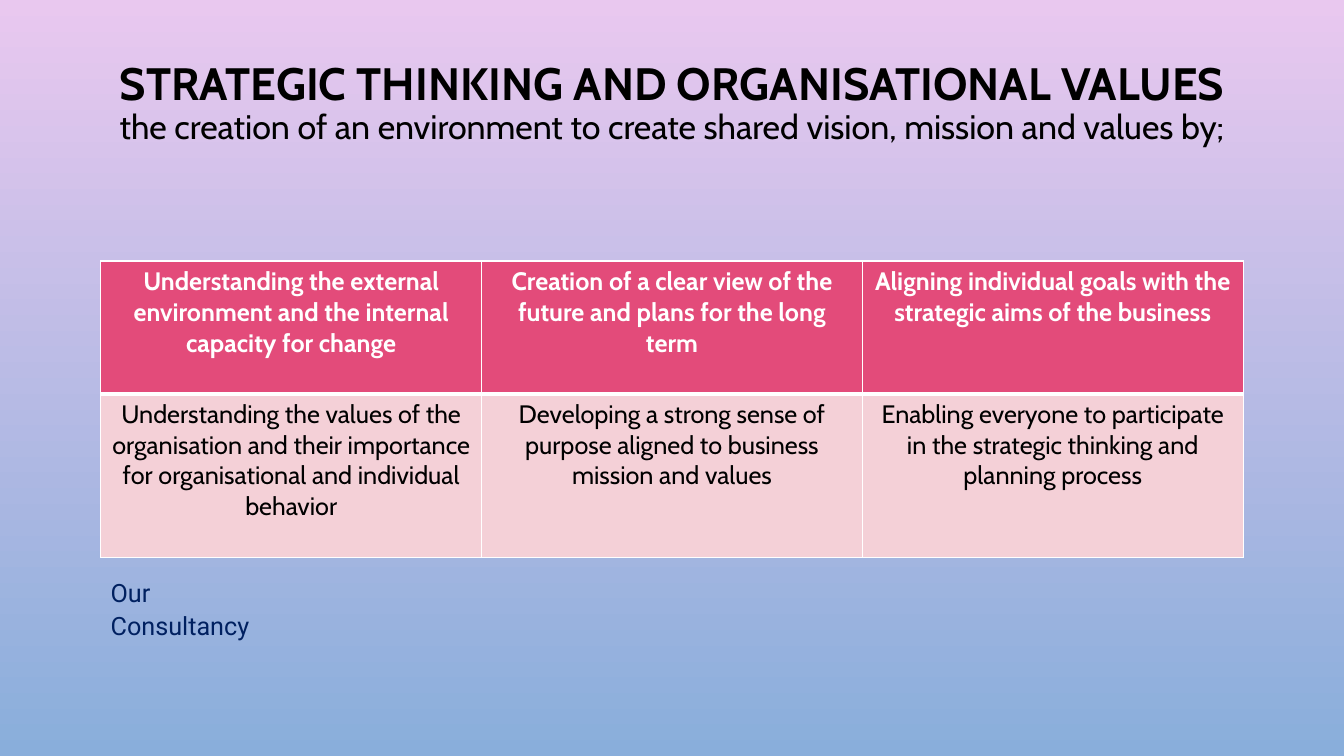
from lxml import etree
from pptx import Presentation
from pptx.dml.color import RGBColor
from pptx.enum.text import MSO_ANCHOR, MSO_AUTO_SIZE, PP_ALIGN
from pptx.oxml.ns import qn
from pptx.util import Pt

TOP = MSO_ANCHOR.TOP
NO_FIT = MSO_AUTO_SIZE.NONE
LEFT, CENTER = PP_ALIGN.LEFT, PP_ALIGN.CENTER
TITLE_ONLY = 5

COLORS = {
    "sky_top": "E9C8EF",
    "sky_bottom": "89AEDB",
    "header": "E34B7A",
    "body": "F4D0D7",
    "white": "FFFFFF",
    "black": "000000",
    "navy": "002060",
}

HEADINGS = [
    "Understanding the external environment and the internal capacity for change",
    "Creation of a clear view of the future and plans for the long term",
    "Aligning individual goals with the strategic aims of the business",
]
DETAILS = [
    "Understanding the values of the organisation and their importance "
    "for organisational and individual behavior",
    "Developing a strong sense of purpose aligned to business mission and values",
    "Enabling everyone to participate in the strategic thinking and planning process",
]


def rgb(name):
    return RGBColor.from_string(COLORS[name])


def add_text(p, text, size=18, font="Cabin", color="black", bold=False, align=CENTER):
    p.alignment = align
    r = p.add_run()
    r.text = text
    r.font.size = Pt(size)
    r.font.name = font
    r.font.bold = bold
    r.font.color.rgb = rgb(color)


def set_borders(cell, **widths):
    tcPr = cell._tc.get_or_add_tcPr()
    for side in ("L", "R", "T", "B"):
        ln = etree.SubElement(tcPr, qn(f"a:ln{side}"), w=str(Pt(widths.get(side, 1))))
        fill = etree.SubElement(ln, qn("a:solidFill"))
        etree.SubElement(fill, qn("a:srgbClr"), val=COLORS["white"])


def add_background(s):
    fill = s.background.fill
    fill.gradient()
    fill.gradient_angle = 270
    for stop, position, name in zip(fill.gradient_stops, (0, 1), ("sky_top", "sky_bottom")):
        stop.position = position
        stop.color.rgb = rgb(name)


def add_title(s, x, y, w, h):
    sp = s.shapes.title
    sp.left, sp.top, sp.width, sp.height = Pt(x), Pt(y), Pt(w), Pt(h)
    tf = sp.text_frame
    tf.word_wrap = True
    tf.auto_size = NO_FIT
    tf.vertical_anchor = TOP
    tf.margin_top = Pt(0)
    p = tf.paragraphs[0]
    p.line_spacing = 0.9
    add_text(p, "STRATEGIC THINKING AND ORGANISATIONAL VALUES", size=32.4, bold=True)
    p.add_line_break()
    add_text(p, "the creation of an environment to create shared vision, "
                "mission and values by;", size=24.3)


def add_values_table(s, x, y, w, row_heights):
    table = s.shapes.add_table(2, 3, Pt(x), Pt(y), Pt(w), Pt(sum(row_heights))).table
    table.horz_banding = False
    for col in table.columns:
        col.width = Pt(w / 3)
    rows = [
        (HEADINGS, "header", "white", True, {"B": 3}),
        (DETAILS, "body", "black", False, {"T": 3}),
    ]
    for i, (texts, fill, color, bold, borders) in enumerate(rows):
        table.rows[i].height = Pt(row_heights[i])
        for j, text in enumerate(texts):
            cell = table.cell(i, j)
            set_borders(cell, **borders)
            cell.fill.solid()
            cell.fill.fore_color.rgb = rgb(fill)
            add_text(cell.text_frame.paragraphs[0], text, color=color, bold=bold)


def add_footer(s, x, y, w, h):
    tf = s.shapes.add_textbox(Pt(x), Pt(y), Pt(w), Pt(h)).text_frame
    tf.word_wrap = True
    p = tf.paragraphs[0]
    p.line_spacing = 1.07
    p.space_after = Pt(8)
    add_text(p, "Our Consultancy", font="Roboto", color="navy", align=LEFT)


def main():
    prs = Presentation()
    prs.slide_width, prs.slide_height = Pt(960), Pt(540)
    s = prs.slides.add_slide(prs.slide_layouts[TITLE_ONLY])
    add_background(s)
    add_title(s, 72, 43.5, 816, 131.5)
    add_values_table(s, 72, 186.5, 816, (95, 117))
    add_footer(s, 72, 407.5, 139.7, 31)
    prs.save("out.pptx")


if __name__ == "__main__":
    main()
